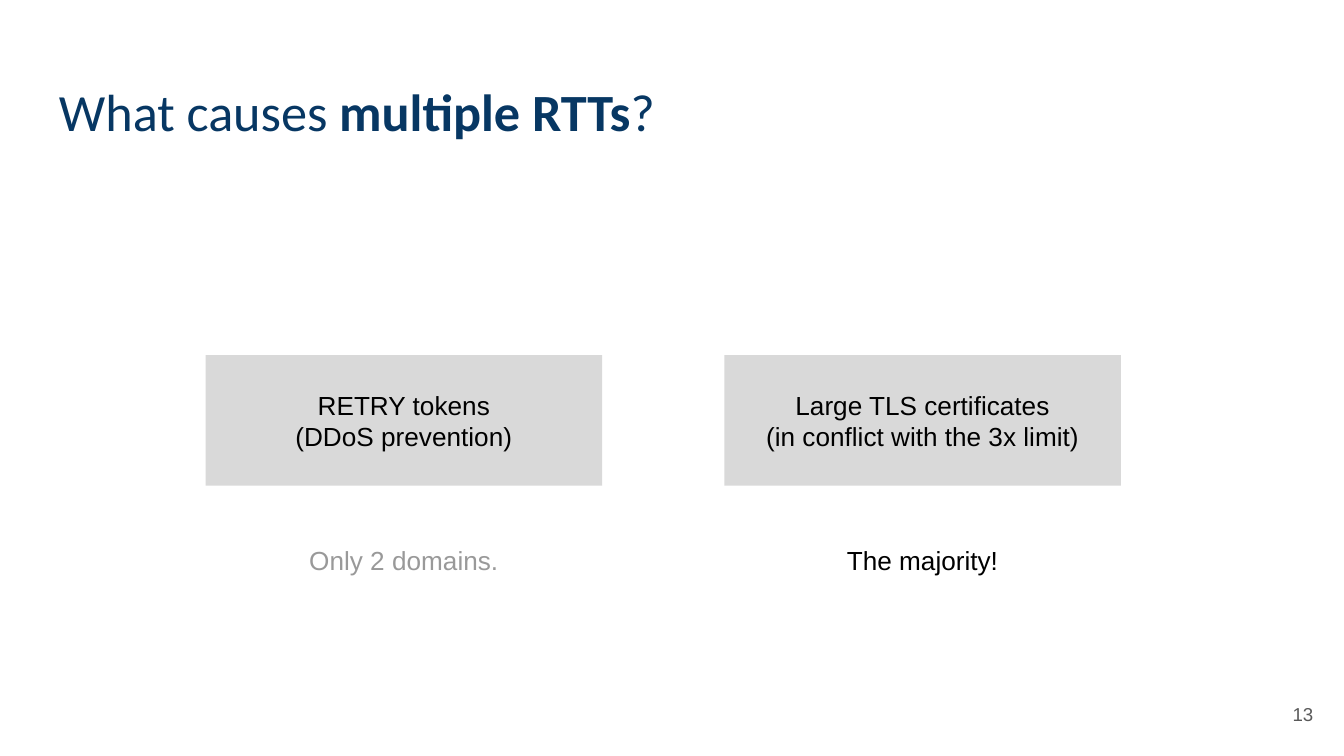
import pptx
import pptx.dml.color
import pptx.enum.shapes
import pptx.enum.text
import pptx.util

ALIGN = pptx.enum.text.PP_ALIGN
ANCHOR = pptx.enum.text.MSO_ANCHOR
INCH = pptx.util.Inches(1)


def color(hex_string):
    return pptx.dml.color.RGBColor.from_string(hex_string)


def write(shape, text, size, hex_string, align, anchor=ANCHOR.MIDDLE, font="Arial"):
    """Fill the shape with text; parts between asterisks become bold runs."""
    frame = shape.text_frame
    frame.word_wrap = True
    frame.vertical_anchor = anchor
    frame.margin_left = frame.margin_right = pptx.util.Inches(0.1)
    frame.margin_top = frame.margin_bottom = pptx.util.Inches(0.1)
    frame.text = text.split("*")[0]
    for index, part in enumerate(text.split("*")[1:], start=1):
        run = frame.paragraphs[0].add_run()
        run.text = part
        run.font.bold = index % 2 == 1
    for paragraph in frame.paragraphs:
        paragraph.alignment = align
        for run in paragraph.runs:
            run.font.name = font
            run.font.size = pptx.util.Pt(size)
            run.font.color.rgb = color(hex_string)


presentation = pptx.Presentation()
presentation.slide_width = 10 * INCH
presentation.slide_height = presentation.slide_width * 9 // 16
slide = presentation.slides.add_slide(presentation.slide_layouts[6])
shapes = slide.shapes

# Title and slide number
margin = 0.34
title = shapes.add_textbox(
    int(margin * INCH), int(0.49 * INCH), int((10 - 2 * margin) * INCH), int(0.63 * INCH))
write(title, "What causes *multiple RTTs*?", 28, "073763", ALIGN.LEFT, ANCHOR.TOP, "Calibri")

number = shapes.add_textbox(
    int(9.27 * INCH), int(5.1 * INCH), int(0.6 * INCH), int(0.43 * INCH))
write(number, "13", 10, "595959", ALIGN.RIGHT)

# One column per cause: a box with a verdict centred below it
first_left, column_pitch = 1.53, 3.86
box_width, verdict_width = 2.95, 2
box_top = int(0.47 * presentation.slide_height)
causes = [
    ("RETRY tokens\v(DDoS prevention)", "Only 2 domains.", "999999"),
    ("Large TLS certificates\n(in conflict with the 3x limit)", "The majority!", "000000"),
]
for column, (cause, verdict, verdict_color) in enumerate(causes):
    left = first_left + column * column_pitch
    box = shapes.add_shape(
        pptx.enum.shapes.MSO_SHAPE.RECTANGLE,
        int(left * INCH), box_top, int(box_width * INCH), int(0.97 * INCH))
    box.shadow.inherit = False
    box.fill.solid()
    box.fill.fore_color.rgb = color("D9D9D9")
    box.line.fill.background()
    write(box, cause, 14, "000000", ALIGN.CENTER)

    verdict_left = left + (box_width - verdict_width) / 2
    label = shapes.add_textbox(
        int(verdict_left * INCH), int(3.95 * INCH), verdict_width * INCH, int(0.44 * INCH))
    write(label, verdict, 14, verdict_color, ALIGN.CENTER)
    label.text_frame.auto_size = pptx.enum.text.MSO_AUTO_SIZE.SHAPE_TO_FIT_TEXT

presentation.save("out.pptx")
